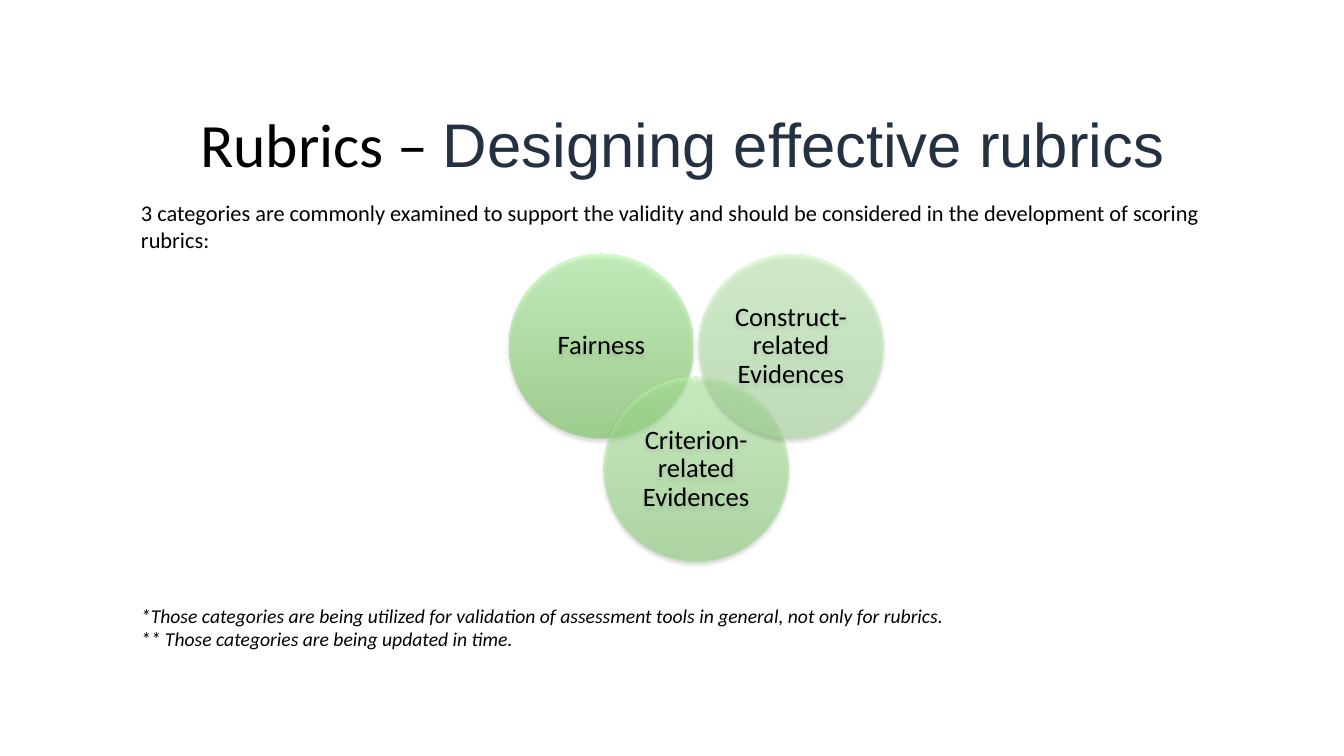
from lxml import etree
from pptx import Presentation
from pptx.dml.color import RGBColor
from pptx.enum import shapes, text
from pptx.oxml import ns
from pptx.util import Inches, Pt

TITLE = [("Rubrics – ", "Calibri", "000000"),
         ("Designing effective rubrics", "Arial", "243142")]
INTRO = ["3 categories are commonly examined to support the validity and should be "
         "considered in the development of scoring rubrics:"]
FOOTNOTES = ["*Those categories are being utilized for validation of assessment tools "
             "in general, not only for rubrics.",
             "** Those categories are being updated in time."]
# Label, column, row, bottom colour, top colour (back to front)
CATEGORIES = [("Fairness", 0, 0, "69C449", "B0FF9F"),
              ("Criterion-related Evidences", 1, 1, "87D372", "BCFFAA"),
              ("Construct-related Evidences", 2, 0, "ABE19E", "CBFFBD")]

VENN_LEFT, VENN_TOP, DIAMETER = 5.05, 2.52, 1.83
STEP_X, STEP_Y = 0.94, 1.22
MARGIN_LEFT, TEXT_WIDTH = 1.3, 11.22


def rgb(color):
    return RGBColor.from_string(color)


def set_font(font, size, color="000000", name="Calibri", italic=None):
    font.size, font.name, font.italic = Pt(size), name, italic
    font.color.rgb = rgb(color)


def add_text(slide, lines, top, height, size, italic=None):
    frame = slide.shapes.add_textbox(Inches(MARGIN_LEFT), Inches(top),
                                     Inches(TEXT_WIDTH), Inches(height)).text_frame
    frame.word_wrap = True
    frame.text = "\n".join(lines)
    for paragraph in frame.paragraphs:
        set_font(paragraph.font, size, italic=italic)


def add_alpha(color_element, percent):
    etree.SubElement(color_element, ns.qn("a:alpha"), val=str(percent * 1000))


def add_shadow(shape):
    shape.shadow.inherit = False
    effects = shape._element.spPr.find(ns.qn("a:effectLst"))
    shadow = etree.SubElement(effects, ns.qn("a:outerShdw"), blurRad=str(Pt(3.1)),
                              dist=str(Pt(1.8)), dir="5400000", rotWithShape="0")
    add_alpha(etree.SubElement(shadow, ns.qn("a:srgbClr"), val="000000"), 35)


def add_circle(slide, label, column, row, bottom_color, top_color):
    circle = slide.shapes.add_shape(
        shapes.MSO_SHAPE.OVAL,
        Inches(VENN_LEFT + column * STEP_X), Inches(VENN_TOP + row * STEP_Y),
        Inches(DIAMETER), Inches(DIAMETER))
    circle.line.fill.background()
    # Translucent gradient running upwards
    circle.fill.gradient()
    circle.fill.gradient_angle = 90
    for stop, color in zip(circle.fill.gradient_stops, (bottom_color, top_color)):
        stop.color.rgb = rgb(color)
    for color_element in circle._element.spPr.iter(ns.qn("a:srgbClr")):
        add_alpha(color_element, 49)
    add_shadow(circle)
    # Label
    frame = circle.text_frame
    frame.word_wrap = True
    frame.vertical_anchor = text.MSO_ANCHOR.MIDDLE
    frame.margin_left = frame.margin_right = Inches(0.08)
    frame.margin_top = frame.margin_bottom = Inches(0.08)
    frame.text = label
    paragraph = frame.paragraphs[0]
    paragraph.alignment = text.PP_ALIGN.CENTER
    paragraph.line_spacing = 0.9
    set_font(paragraph.font, 19)


def main():
    deck = Presentation()
    deck.slide_width, deck.slide_height = Inches(13.33), Inches(7.5)
    slide = deck.slides.add_slide(deck.slide_layouts[5])

    # Title
    title = slide.shapes.title
    title.left, title.top = Inches(1.02), Inches(0.79)
    title.width, title.height = Inches(11.5), Inches(1.35)
    title.text_frame.vertical_anchor = text.MSO_ANCHOR.MIDDLE
    heading = title.text_frame.paragraphs[0]
    heading.alignment = text.PP_ALIGN.CENTER
    heading.line_spacing = 0.9
    for words, font_name, color in TITLE:
        run = heading.add_run()
        run.text = words
        set_font(run.font, 44, color, font_name)

    # Introduction, overlapping circles, footnotes
    add_text(slide, INTRO, 1.93, 0.88, 16)
    for category in CATEGORIES:
        add_circle(slide, *category)
    add_text(slide, FOOTNOTES, 5.94, 0.81, 14, italic=True)

    deck.save("out.pptx")


if __name__ == "__main__":
    main()
